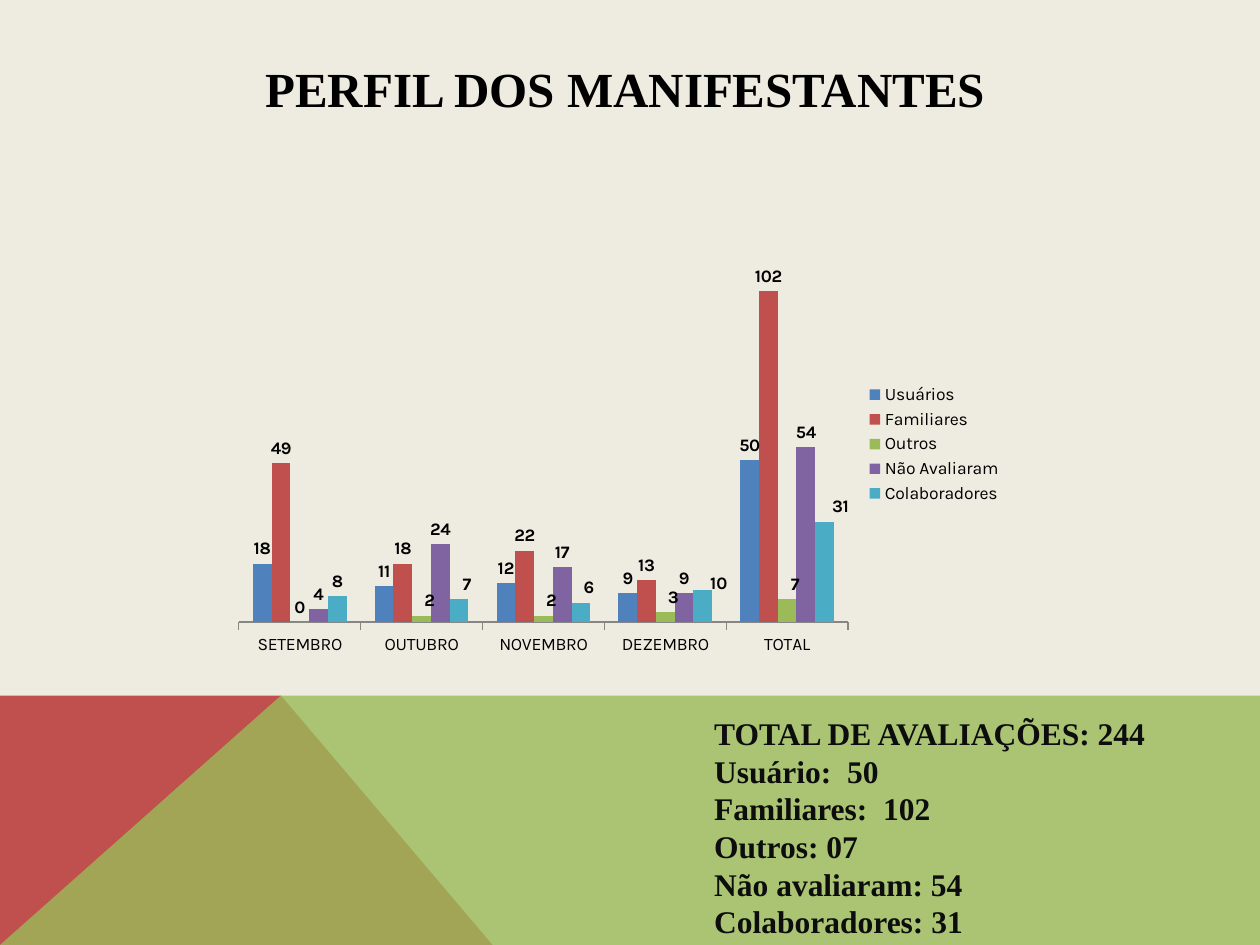
from lxml import etree
from pptx import Presentation
from pptx.chart.data import CategoryChartData
from pptx.dml.color import RGBColor
from pptx.enum.chart import XL_CHART_TYPE, XL_LABEL_POSITION, XL_LEGEND_POSITION, XL_TICK_LABEL_POSITION, XL_TICK_MARK
from pptx.enum.text import MSO_ANCHOR, PP_ALIGN
from pptx.oxml.ns import qn
from pptx.util import Inches, Pt

COLUMNS = XL_CHART_TYPE.COLUMN_CLUSTERED
OUTSIDE_END = XL_LABEL_POSITION.OUTSIDE_END
RIGHT = XL_LEGEND_POSITION.RIGHT
LABELS_LOW = XL_TICK_LABEL_POSITION.LOW
TICK_OUT = XL_TICK_MARK.OUTSIDE
MIDDLE, TOP = MSO_ANCHOR.MIDDLE, MSO_ANCHOR.TOP
CENTER, LEFT = PP_ALIGN.CENTER, PP_ALIGN.LEFT

MONTHS = ["SETEMBRO", "OUTUBRO", "NOVEMBRO", "DEZEMBRO", "TOTAL"]
PROFILES = [
    ("Usuários", "4F81BD", [18, 11, 12, 9, 50]),
    ("Familiares", "C0504D", [49, 18, 22, 13, 102]),
    ("Outros", "9BBB59", [0, 2, 2, 3, 7]),
    ("Não Avaliaram", "8064A2", [4, 24, 17, 9, 54]),
    ("Colaboradores", "4BACC6", [8, 7, 6, 10, 31]),
]
LABEL_SHIFTS = {
    "Outros": {1: (0.01, 0), 2: (0.01, 0), 3: (0.01, 0), 4: (0.01, 0)},
    "Colaboradores": {1: (0.01, 0), 2: (0.01, 0), 3: (0.02, 0.02), 4: (0.02, 0)},
}
TOTALS = [
    "TOTAL DE AVALIAÇÕES: 244",
    "Usuário:  50",
    "Familiares:  102",
    "Outros: 07",
    "Não avaliaram: 54",
    "Colaboradores: 31",
]


def color(value):
    return RGBColor.from_string(value)


def style_font(font, name, size, value, bold=False):
    font.name = name
    font.size = Pt(size)
    font.bold = bold
    font.color.rgb = color(value)


def add_run(paragraph, text, size, value):
    run = paragraph.add_run()
    run.text = text
    style_font(run.font, "Times New Roman", size, value, True)


def add_polygon(slide, points, value, alpha=None):
    corners = [(Inches(x), Inches(y)) for x, y in points]
    builder = slide.shapes.build_freeform(*corners[0])
    builder.add_line_segments(corners[1:], close=True)
    shape = builder.convert_to_shape()
    shape.shadow.inherit = False
    shape.fill.solid()
    shape.fill.fore_color.rgb = color(value)
    shape.line.fill.background()
    if alpha:
        fill_color = shape.fill._xPr.find(".//" + qn("a:srgbClr"))
        etree.SubElement(fill_color, qn("a:alpha")).set("val", str(alpha * 1000))


def add_footer_band(slide, left, top, width, height):
    right, bottom = left + width, top + height
    peak = (left + 2.23, top)
    add_polygon(slide, [(left, bottom), (left, top), peak, (left + 3.91, bottom)], "C0504D")
    add_polygon(slide, [(left, bottom), peak, (right, top), (right, bottom)], "9BBB59", 80)


def place_title(slide, left, top, width, height):
    title = slide.shapes.title
    title.left, title.top = Inches(left), Inches(top)
    title.width, title.height = Inches(width), Inches(height)
    frame = title.text_frame
    frame.vertical_anchor = MIDDLE
    paragraph = frame.paragraphs[0]
    paragraph.alignment = CENTER
    add_run(paragraph, "PERFIL DOS MANIFESTANTES ", 28, "000000")


def add_totals(slide, left, top, width, height):
    box = slide.shapes.add_textbox(Inches(left), Inches(top), Inches(width), Inches(height))
    frame = box.text_frame
    frame.word_wrap = True
    frame.vertical_anchor = TOP
    for index, line in enumerate(TOTALS):
        paragraph = frame.add_paragraph() if index else frame.paragraphs[0]
        paragraph.alignment = LEFT
        paragraph.line_spacing = Pt(21.5)
        add_run(paragraph, line, 18, "0D0D0D")


def fill_layout(layout, settings):
    manual = etree.SubElement(layout, qn("c:manualLayout"))
    for name, value in settings.items():
        etree.SubElement(manual, qn("c:" + name)).set("val", str(value))


def set_plot_area(chart, x, y, width, height):
    plot_area = chart._chartSpace.chart.plotArea
    for old_layout in plot_area.findall(qn("c:layout")):
        plot_area.remove(old_layout)
    layout = etree.Element(qn("c:layout"))
    plot_area.insert(0, layout)
    fill_layout(layout, {"layoutTarget": "inner", "xMode": "edge", "yMode": "edge",
                         "x": x, "y": y, "w": width, "h": height})


def shift_label(series, index, x, y):
    label = series.points[index].data_label
    style_font(label.font, "Karla", 10, "000000", True)
    label.position = OUTSIDE_END
    for element in series._element.iter(qn("c:dLbl")):
        identifier = element.find(qn("c:idx"))
        if identifier.get("val") == str(index):
            layout = etree.Element(qn("c:layout"))
            identifier.addnext(layout)
            fill_layout(layout, {"x": x, "y": y})


def style_series(series, value):
    series.format.fill.solid()
    series.format.fill.fore_color.rgb = color(value)
    series.invert_if_negative = False
    labels = series.data_labels
    labels.show_value = True
    labels.position = OUTSIDE_END
    style_font(labels.font, "Karla", 10, "000000", True)
    for index, (x, y) in LABEL_SHIFTS.get(series.name, {}).items():
        shift_label(series, index, x, y)


def add_profile_chart(slide, left, top, width, height):
    data = CategoryChartData()
    data.categories = MONTHS
    for name, _, values in PROFILES:
        data.add_series(name, values)
    chart = slide.shapes.add_chart(
        COLUMNS, Inches(left), Inches(top), Inches(width), Inches(height), data).chart
    chart.has_title = False
    style_font(chart.font, "Karla", 10, "000000")
    chart.has_legend = True
    chart.legend.position = RIGHT
    chart.legend.include_in_layout = False
    category_axis = chart.category_axis
    category_axis.major_tick_mark = TICK_OUT
    category_axis.tick_label_position = LABELS_LOW
    category_axis.format.line.color.rgb = color("868686")
    value_axis = chart.value_axis
    value_axis.visible = False
    value_axis.has_major_gridlines = False
    value_axis.minimum_scale = 0
    value_axis.maximum_scale = 120
    plot = chart.plots[0]
    plot.gap_width = 150
    plot.overlap = 0
    plot.vary_by_categories = False
    for series, (_, value, _) in zip(plot.series, PROFILES):
        style_series(series, value)
    set_plot_area(chart, 0.02, 0.02, 0.77, 0.885)


def main():
    presentation = Presentation()
    presentation.slide_width = Inches(10)
    presentation.slide_height = Inches(7.5)
    slide = presentation.slides.add_slide(presentation.slide_layouts[5])
    slide.background.fill.solid()
    slide.background.fill.fore_color.rgb = color("EEECE1")
    add_footer_band(slide, 0, 5.52, 10, 1.98)
    place_title(slide, 0.9, 0.4, 8.22, 0.6)
    add_totals(slide, 5.57, 5.62, 3.98, 2.52)
    add_profile_chart(slide, 1.77, 1.78, 6.28, 3.49)
    presentation.save("out.pptx")


if __name__ == "__main__":
    main()
